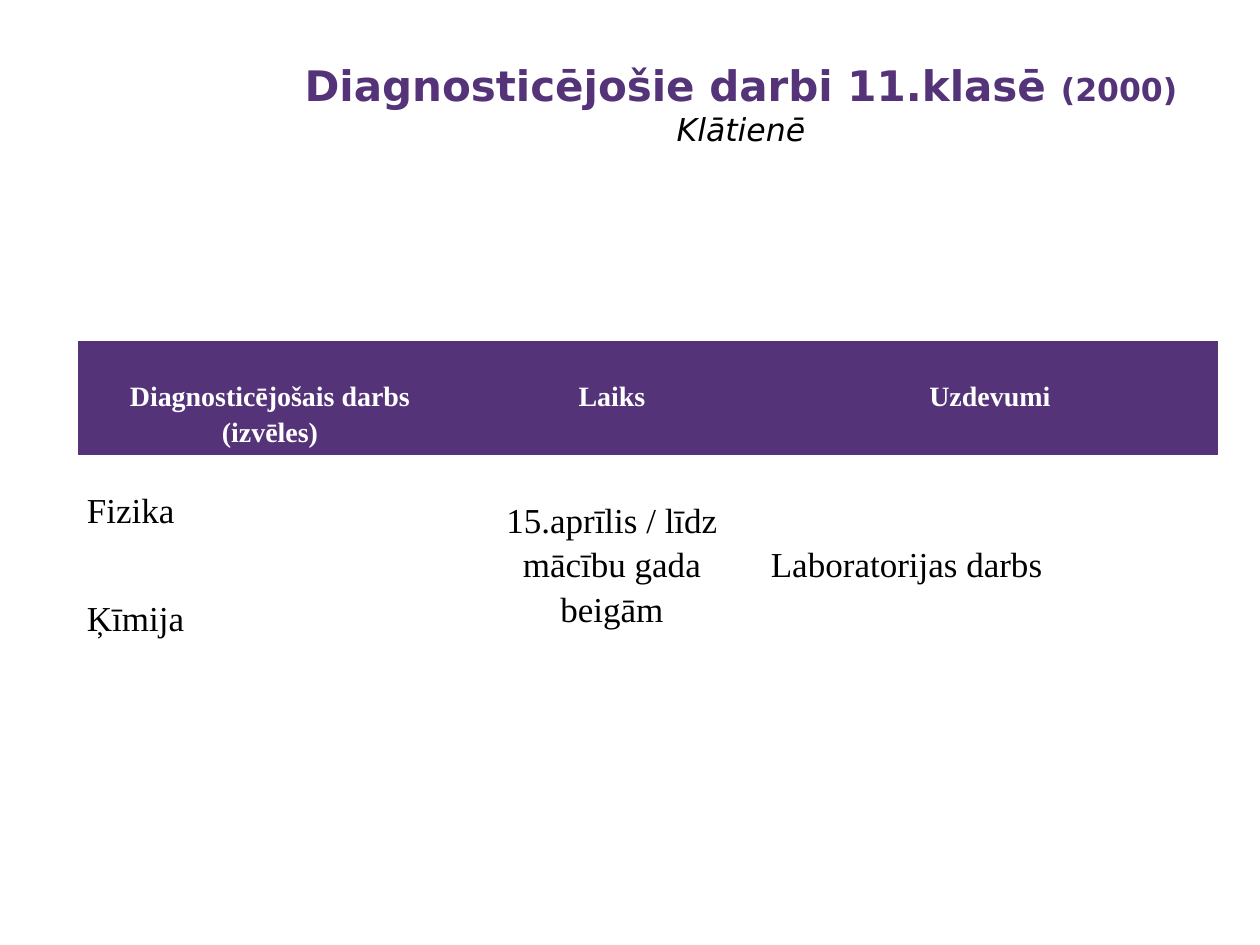
from copy import deepcopy

from pptx import Presentation
from pptx.dml.color import RGBColor
from pptx.enum.text import MSO_ANCHOR, MSO_AUTO_SIZE, PP_ALIGN
from pptx.oxml.ns import qn
from pptx.util import Pt

TOP, MIDDLE = MSO_ANCHOR.TOP, MSO_ANCHOR.MIDDLE
LEFT, CENTER = PP_ALIGN.LEFT, PP_ALIGN.CENTER
FIXED = MSO_AUTO_SIZE.NONE
SCALE = 914400 / 126
SANS, SERIF = "DejaVu Sans", "Times New Roman"
PURPLE, BLACK, WHITE = "543378", "000000", "FFFFFF"
PLAIN = "{2D5ABB26-0587-4C30-8999-92F81FD0307C}"
COLS = [384, 300, 456]
ROWS = [114, 108, 108]
HEADS = ["Diagnosticējošais darbs\n(izvēles)", "Laiks", "Uzdevumi"]
BODY = [
    (1, 0, "Fizika", LEFT),
    (1, 1, "15.aprīlis / līdz mācību gada beigām", CENTER),
    (1, 2, "Laboratorijas darbs", LEFT),
    (2, 0, "Ķīmija", LEFT),
]


def px(num):
    """Turn pixels into EMU."""
    return round(num * SCALE)


def color(code):
    """Turn a hex string into a colour."""
    return RGBColor.from_string(code)


def style(run, face, size, code, bold=False, italic=False):
    """Format one run."""
    font = run.font
    font.name, font.size = face, Pt(size)
    font.bold, font.italic = bold, italic
    font.color.rgb = color(code)


def add_title(slide):
    """Place the heading and its subtitle line."""
    title = slide.shapes.title
    title.left, title.top = px(284), px(53)
    title.width, title.height = px(914), px(142)
    frame = title.text_frame
    frame.auto_size, frame.vertical_anchor = FIXED, TOP
    para = frame.paragraphs[0]
    para.text = "Diagnosticējošie darbi 11.klasē "
    para.alignment = CENTER
    style(para.runs[0], SANS, 24, PURPLE, bold=True)
    year = para.add_run()
    year.text = "(2000)"
    style(year, SANS, 18, PURPLE, bold=True)
    para.add_line_break()
    mark = para._p.find(qn("a:br"))
    mark.append(deepcopy(year._r.rPr))
    mode = para.add_run()
    mode.text = "Klātienē"
    style(mode, SANS, 18, BLACK, italic=True)


def fill_cell(cell, text, size, code, align, bold=False):
    """Write and format the text of one cell."""
    cell.text_frame.text = text
    for para in cell.text_frame.paragraphs:
        para.alignment, para.line_spacing = align, 1.15
        for run in para.runs:
            style(run, SERIF, size, code, bold)


def add_grid(slide):
    """Build the table of tests."""
    frame = slide.shapes.add_table(
        len(ROWS), len(COLS), px(78), px(341), px(sum(COLS)), px(sum(ROWS)))
    table = frame.table
    table._tbl.tblPr.find(qn("a:tableStyleId")).text = PLAIN
    table.horz_banding = False
    for col, width in zip(table.columns, COLS):
        col.width = px(width)
    for row, height in zip(table.rows, ROWS):
        row.height = px(height)
    for cell in table.iter_cells():
        cell.margin_left = cell.margin_right = px(9)
        cell.margin_top = cell.margin_bottom = 0
        cell.vertical_anchor = MIDDLE
        cell.fill.background()
    for col, text in enumerate(HEADS):
        cell = table.cell(0, col)
        cell.fill.solid()
        cell.fill.fore_color.rgb = color(PURPLE)
        cell.vertical_anchor, cell.margin_top = TOP, px(36)
        fill_cell(cell, text, 16, WHITE, CENTER, bold=True)
    for col in (1, 2):
        table.cell(1, col).merge(table.cell(2, col))
    for row, col, text, align in BODY:
        fill_cell(table.cell(row, col), text, 20, BLACK, align)


def main():
    """Build and save the slide."""
    deck = Presentation()
    deck.slide_width, deck.slide_height = px(1260), px(945)
    slide = deck.slides.add_slide(deck.slide_layouts[5])
    add_title(slide)
    add_grid(slide)
    deck.save("out.pptx")


if __name__ == "__main__":
    main()
